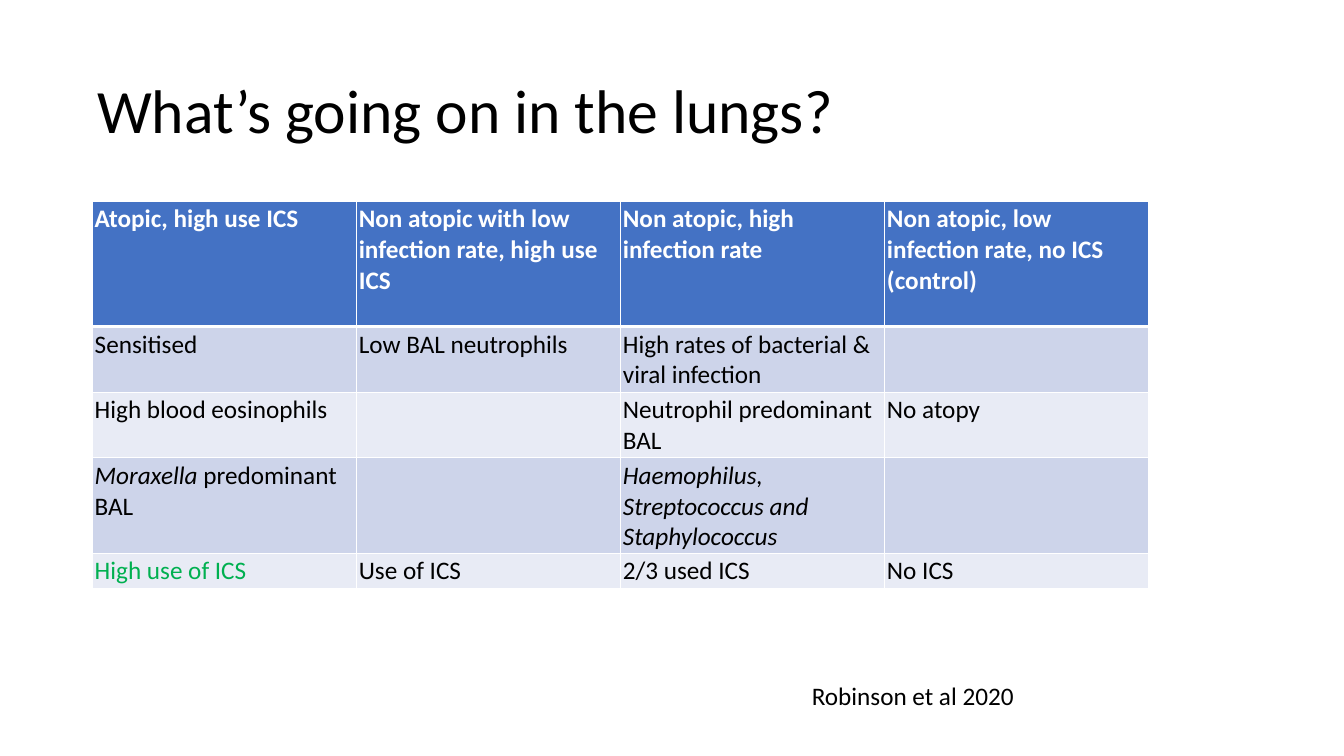
from typing import NamedTuple

from lxml import etree
from pptx import Presentation, util as u
from pptx.dml.color import RGBColor
from pptx.enum import text
from pptx.oxml.ns import qn

SLIDE_WIDTH, SLIDE_HEIGHT = u.Inches(26.67), u.Inches(15)
FONT = "Calibri"
BLACK, WHITE, GREEN = "000000", "FFFFFF", "00B050"
HEADER_FILL, ODD_FILL, EVEN_FILL = "4472C4", "CDD4EA", "E8EBF5"
THIN, THICK = 2, 6
LEFT = 6.86


class Box(NamedTuple):
    """Left, top, width and height in percent of the slide."""
    left: float
    top: float
    width: float
    height: float


class Run(NamedTuple):
    words: str
    italic: bool = False
    color: str = BLACK


class Label(NamedTuple):
    words: str
    box: Box
    size: float
    frame: dict
    line_spacing: float = 1.0


LABELS = [
    Label("What’s going on in the lungs?", Box(LEFT, 5.33, 86.24, 19.33), 88,
          {"vertical_anchor": text.MSO_ANCHOR.MIDDLE}, 0.9),
    Label("Robinson et al 2020", Box(60.03, 89.27, 35.51, 4.67), 36,
          {"auto_size": text.MSO_AUTO_SIZE.SHAPE_TO_FIT_TEXT}),
]
TABLE_BOX = Box(LEFT, 26.6, 78.6, 51.27)
ROW_HEIGHTS = [16.6, 8.47, 8.27, 12.33, 4.2]
HEADERS = ["Atopic, high use ICS",
           "Non atopic with low infection rate, high use ICS",
           "Non atopic, high infection rate",
           "Non atopic, low infection rate, no ICS (control)"]
BODY = [
    [[Run("Sensitised")], [Run("Low BAL neutrophils")],
     [Run("High rates of bacterial & viral infection")], []],
    [[Run("High blood eosinophils")], [],
     [Run("Neutrophil predominant BAL")], [Run("No atopy")]],
    [[Run("Moraxella", italic=True), Run(" predominant BAL")], [],
     [Run("Haemophilus, Streptococcus and Staphylococcus", italic=True)], []],
    [[Run("High use of ICS", color=GREEN)], [Run("Use of ICS")],
     [Run("2/3 used ICS")], [Run("No ICS")]],
]


def across(percent: float) -> int:
    return int(SLIDE_WIDTH * percent / 100)


def down(percent: float) -> int:
    return int(SLIDE_HEIGHT * percent / 100)


def place(box: Box) -> tuple:
    return across(box.left), down(box.top), across(box.width), down(box.height)


def rgb(color: str) -> RGBColor:
    return RGBColor.from_string(color)


def set_attributes(target, values: dict) -> None:
    for name, value in values.items():
        setattr(target, name, value)


def set_margins(target, inches: float) -> None:
    for side in ("left", "top", "right", "bottom"):
        setattr(target, f"margin_{side}", u.Inches(inches))


def add_run(paragraph, run: Run, size: float, bold: bool = False) -> None:
    piece = paragraph.add_run()
    piece.text = run.words
    set_attributes(piece.font, {"name": FONT, "size": u.Pt(size),
                                "bold": bold, "italic": run.italic})
    piece.font.color.rgb = rgb(run.color)


def add_label(slide, label: Label) -> None:
    frame = slide.shapes.add_textbox(*place(label.box)).text_frame
    set_attributes(frame, {"word_wrap": True, **label.frame})
    set_margins(frame, 0.1)
    paragraph = frame.paragraphs[0]
    paragraph.line_spacing = label.line_spacing
    add_run(paragraph, Run(label.words), label.size)


def add_borders(cell, top: float, bottom: float) -> None:
    properties = cell._tc.get_or_add_tcPr()
    widths = {"a:lnL": THIN, "a:lnR": THIN, "a:lnT": top, "a:lnB": bottom}
    for tag, width in widths.items():
        line = etree.SubElement(properties, qn(tag), w=str(u.Pt(width)))
        fill = etree.SubElement(line, qn("a:solidFill"))
        etree.SubElement(fill, qn("a:srgbClr"), val=WHITE)


def add_lung_table(slide) -> None:
    rows = [[[Run(header, color=WHITE)] for header in HEADERS], *BODY]
    table = slide.shapes.add_table(len(rows), len(HEADERS), *place(TABLE_BOX)).table
    for column in table.columns:
        column.width = across(TABLE_BOX.width / len(HEADERS))
    for index, (runs_by_cell, height) in enumerate(zip(rows, ROW_HEIGHTS)):
        is_header = index == 0
        color = HEADER_FILL if is_header else ODD_FILL if index % 2 else EVEN_FILL
        table.rows[index].height = down(height)
        for cell, runs in zip(table.rows[index].cells, runs_by_cell):
            add_borders(cell, THICK if index == 1 else THIN,
                        THICK if is_header else THIN)
            cell.fill.solid()
            cell.fill.fore_color.rgb = rgb(color)
            set_margins(cell, 0.05)
            for run in runs:
                add_run(cell.text_frame.paragraphs[0], run, 36, bold=is_header)


def main() -> None:
    presentation = Presentation()
    set_attributes(presentation, {"slide_width": SLIDE_WIDTH,
                                  "slide_height": SLIDE_HEIGHT})
    slide = presentation.slides.add_slide(presentation.slide_layouts[6])
    for label in LABELS:
        add_label(slide, label)
    add_lung_table(slide)
    presentation.save("out.pptx")


if __name__ == "__main__":
    main()
